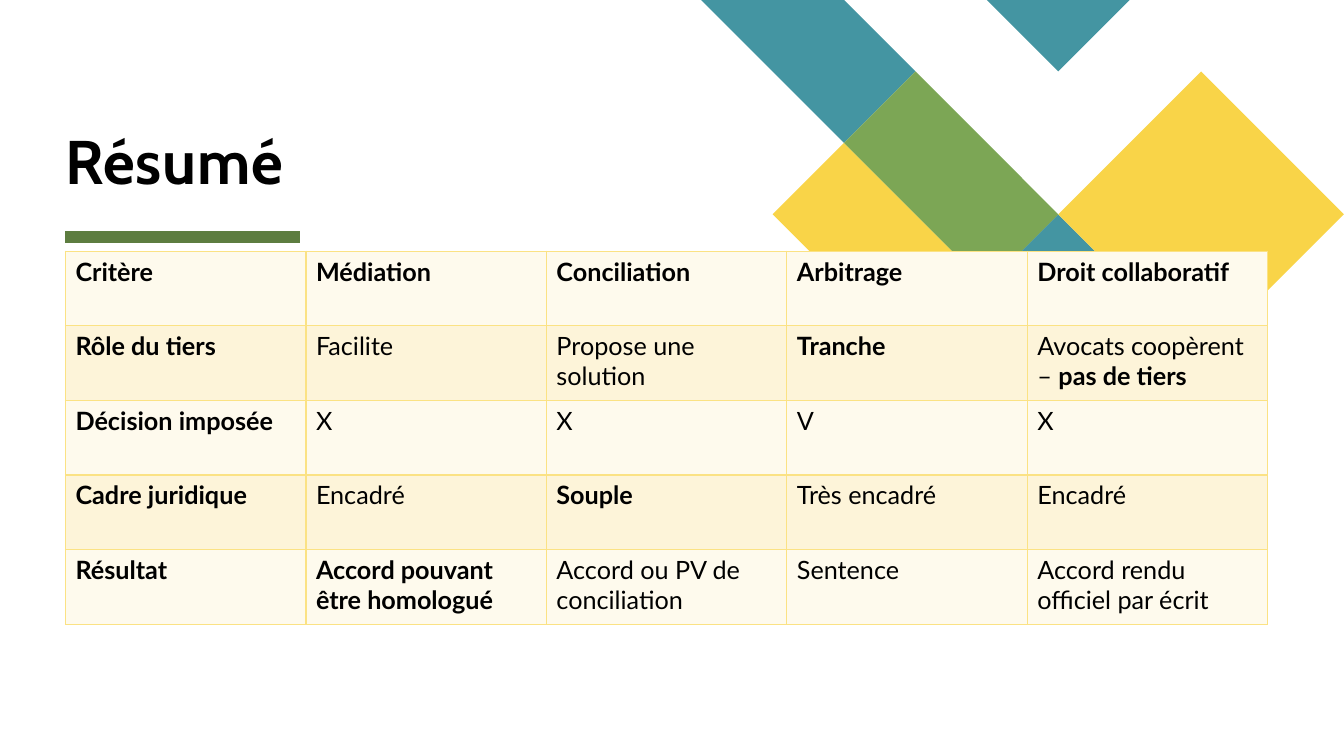
from dataclasses import dataclass

from lxml import etree
from pptx import Presentation
from pptx.dml.color import RGBColor
from pptx.enum.shapes import MSO_CONNECTOR
from pptx.enum.text import MSO_ANCHOR
from pptx.oxml.ns import qn
from pptx.util import Cm, Pt

STRAIGHT = MSO_CONNECTOR.STRAIGHT
BOTTOM = MSO_ANCHOR.BOTTOM


@dataclass(frozen=True)
class Theme:
    teal: str = "4495A2"
    yellow: str = "F9D448"
    green: str = "7CA655"
    rule: str = "5D7D40"
    ink: str = "000000"
    edge: str = "FBE284"
    bands: tuple = ("FEFAED", "FDF4D9")
    head: str = "Cabin"
    body: str = "Lato"
    title: int = 44
    cell: int = 18
    stroke: int = 8
    border: int = 1


THEME = Theme()

# Corners of each tile, in lattice steps
TILES = [
    (THEME.teal, [(0, 0), (2, 0), (3, 1), (2, 2)]),
    (THEME.teal, [(5, 3), (6, 4), (5, 5), (4, 4)]),
    (THEME.yellow, [(2, 2), (4, 4), (3, 5), (1, 3)]),
    (THEME.teal, [(4, 0), (6, 0), (5, 1)]),
    (THEME.green, [(3, 1), (5, 3), (4, 4), (2, 2)]),
    (THEME.yellow, [(7, 1), (9, 3), (7, 5), (5, 3)]),
]

# Asterisks enclose bold words
ROWS = [
    ["*Critère*", "*Médiation*", "*Conciliation*", "*Arbitrage*",
     "*Droit collaboratif*"],
    ["*Rôle du tiers*", "Facilite", "Propose une solution", "*Tranche*",
     "Avocats coopèrent – *pas de tiers*"],
    ["*Décision imposée*", "X", "X", "V", "X"],
    ["*Cadre juridique*", "Encadré", "*Souple*", "Très encadré", "Encadré"],
    ["*Résultat*", "*Accord pouvant être homologué*",
     "Accord ou PV de conciliation", "Sentence",
     "Accord rendu officiel par écrit"],
]


def apply(item, form):
    for key, value in form.items():
        setattr(item, key, value)


def style(run, name, size, bold):
    apply(run.font, {"name": name, "size": Pt(size), "bold": bold})
    run.font.color.rgb = RGBColor.from_string(THEME.ink)


def draw_tiles(slide, left, top, width):
    step = width / 9
    for color, (first, *rest) in TILES:
        pen = slide.shapes.build_freeform(*first, scale=step)
        pen.add_line_segments(rest, close=True)
        tile = pen.convert_to_shape(left, top)
        tile.shadow.inherit = False
        tile.fill.solid()
        tile.fill.fore_color.rgb = RGBColor.from_string(color)
        tile.line.fill.background()


def draw_title(slide, left, top, width, height):
    # Heading
    frame = slide.shapes.add_textbox(left, top, width, height).text_frame
    apply(frame, {"word_wrap": True, "vertical_anchor": BOTTOM,
                  "margin_left": 0, "margin_right": 0,
                  "margin_top": 0, "margin_bottom": 0})
    para = frame.paragraphs[0]
    para.line_spacing = 0.8
    run = para.add_run()
    run.text = "Résumé"
    style(run, THEME.head, THEME.title, True)
    run.font._element.set("spc", "50")

    # Rule below the heading
    y = top + height + Cm(1.02)
    rule = slide.shapes.add_connector(STRAIGHT, left, y, left + Cm(5.92), y)
    rule.line.color.rgb = RGBColor.from_string(THEME.rule)
    rule.line.width = Pt(THEME.stroke)
    etree.SubElement(rule._element.spPr, qn("a:effectLst"))


def add_edges(cell):
    props = cell._tc.get_or_add_tcPr()
    for side in ("lnL", "lnR", "lnT", "lnB"):
        line = etree.SubElement(props, qn("a:" + side),
                                w=str(Pt(THEME.border)))
        fill = etree.SubElement(line, qn("a:solidFill"))
        etree.SubElement(fill, qn("a:srgbClr"), val=THEME.edge)


def fill_cell(cell, text, color):
    add_edges(cell)
    cell.fill.solid()
    cell.fill.fore_color.rgb = RGBColor.from_string(color)
    para = cell.text_frame.paragraphs[0]
    for i, part in enumerate(text.split("*")):
        if part:
            run = para.add_run()
            run.text = part
            style(run, THEME.body, THEME.cell, i % 2 == 1)


def draw_table(slide, left, top, width, height):
    rows, cols = len(ROWS), len(ROWS[0])
    table = slide.shapes.add_table(rows, cols, left, top, width, height).table
    apply(table, {"first_row": False, "horz_banding": False})
    for r, row in enumerate(ROWS):
        for c, text in enumerate(row):
            fill_cell(table.cell(r, c), text, THEME.bands[r % 2])


def main():
    deck = Presentation()
    apply(deck, {"slide_width": Cm(33.87), "slide_height": Cm(19.05)})
    slide = deck.slides.add_slide(deck.slide_layouts[6])
    draw_tiles(slide, Cm(17.67), 0, Cm(16.2))
    draw_title(slide, Cm(1.65), Cm(0.53), Cm(25.35), Cm(4.42))
    draw_table(slide, Cm(1.65), Cm(6.33), Cm(30.3), Cm(9.4))
    deck.save("out.pptx")


if __name__ == "__main__":
    main()
